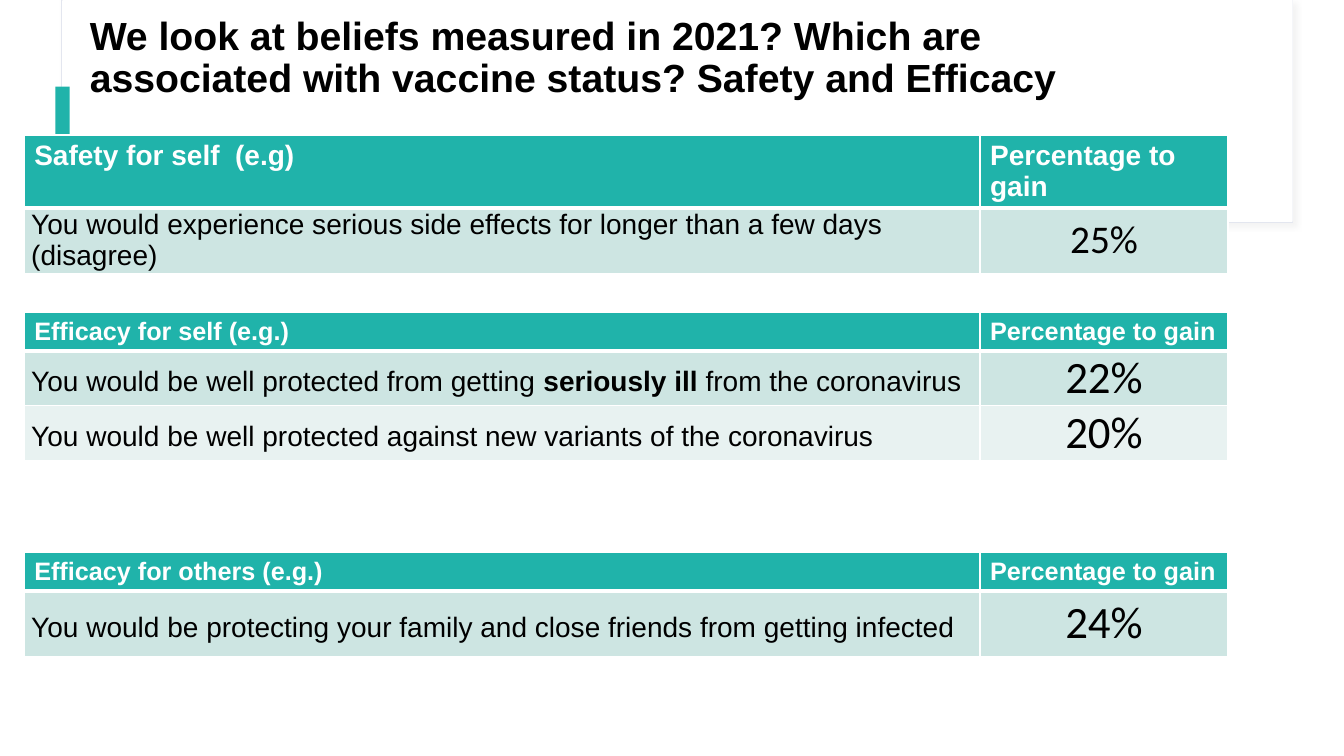
from dataclasses import dataclass
from typing import Optional

from lxml import etree
from pptx import Presentation
from pptx.dml.color import RGBColor
from pptx.enum import shapes, text
from pptx.oxml import ns
from pptx.util import Inches, Pt

TEAL = RGBColor(0x20, 0xB3, 0xAA)
BAND_DARK = RGBColor(0xCD, 0xE5, 0xE2)
BAND_LIGHT = RGBColor(0xE8, 0xF2, 0xF1)
FRAME_LINE = RGBColor(0xE3, 0xE6, 0xEF)
WHITE = RGBColor(0xFF, 0xFF, 0xFF)
BLACK = RGBColor(0, 0, 0)

TABLE_LEFT = 0.24
COLUMN_WIDTHS = (9.48, 2.46)
BODY_SIZE = 20


@dataclass
class Panel:
    left: float
    top: float
    width: float
    height: float
    fill: RGBColor
    line: Optional[RGBColor] = None
    shadow: bool = False


@dataclass
class Run:
    text: str
    bold: Optional[bool] = None
    size: Optional[float] = None


@dataclass
class Belief:
    runs: list[Run]
    percentage: str


@dataclass
class BeliefTable:
    top: float
    heading: str
    heading_size: float
    percentage_size: float
    header_height: float
    row_height: float
    beliefs: list[Belief]


TALL_SPACE = Run(" ", size=28)

PANELS = [
    Panel(0.61, 0, 12.21, 2.21, WHITE, FRAME_LINE, True),
    Panel(0.62, 0, 12.2, 2.2, WHITE),
    Panel(0.55, 0.86, 0.14, 0.77, TEAL),
]

TABLES = [
    BeliefTable(1.34, "Safety for self  (e.g)", 20, 28, 0.7, 0.65, [
        Belief([Run("You would experience serious side effects for longer "
                    "than a few days  (disagree)")], "25%"),
    ]),
    BeliefTable(5.48, "Efficacy for others (e.g.)", 18, 32, 0.3, 0.65, [
        Belief([Run("You would be protecting your family and close friends "
                    "from getting infected"), TALL_SPACE], "24%"),
    ]),
    BeliefTable(3.1, "Efficacy for self (e.g.)", 18, 32, 0.3, 0.3, [
        Belief([Run("You would be well protected from getting "),
                Run("seriously ill", bold=True),
                Run(" from the coronavirus"), TALL_SPACE], "22%"),
        Belief([Run("You would be well protected against new variants "
                    "of the coronavirus"), TALL_SPACE], "20%"),
    ]),
]


def add_shadow(shape) -> None:
    effects = shape.element.spPr.find(ns.qn("a:effectLst"))
    shadow = etree.SubElement(
        effects, ns.qn("a:outerShdw"), blurRad=str(Pt(4)), dist=str(Pt(3)),
        dir=str(45 * 60000), algn="tl", rotWithShape="0")
    color = etree.SubElement(shadow, ns.qn("a:srgbClr"), val="D9D9D9")
    etree.SubElement(color, ns.qn("a:alpha"), val="30000")


def add_panel(slide, panel: Panel) -> None:
    shape = slide.shapes.add_shape(
        shapes.MSO_SHAPE.RECTANGLE, Inches(panel.left), Inches(panel.top),
        Inches(panel.width), Inches(panel.height))
    shape.shadow.inherit = False
    shape.fill.solid()
    shape.fill.fore_color.rgb = panel.fill
    if panel.line is None:
        shape.line.fill.background()
    else:
        shape.line.color.rgb = panel.line
        shape.line.width = Pt(0.75)
    if panel.shadow:
        add_shadow(shape)


def set_font(font, name: str, size: float, color: RGBColor, bold: bool) -> None:
    font.name = name
    font.size = Pt(size)
    font.color.rgb = color
    font.bold = bold


def set_borders(cell, top: float, bottom: float) -> None:
    properties = cell._tc.get_or_add_tcPr()
    for side, width in (("L", 1), ("R", 1), ("T", top), ("B", bottom)):
        line = etree.SubElement(properties, ns.qn(f"a:ln{side}"), w=str(Pt(width)))
        fill = etree.SubElement(line, ns.qn("a:solidFill"))
        etree.SubElement(fill, ns.qn("a:srgbClr"), val=str(WHITE))


def set_fill(cell, color: RGBColor) -> None:
    cell.fill.solid()
    cell.fill.fore_color.rgb = color


def fill_header_cell(cell, label: str, size: float) -> None:
    set_borders(cell, top=1, bottom=3)
    set_fill(cell, TEAL)
    paragraph = cell.text_frame.paragraphs[0]
    paragraph.add_run().text = label
    set_font(paragraph.font, "Arial", size, WHITE, True)


def fill_body_cell(cell, runs: list[Run], name: str, size: float, row: int):
    set_borders(cell, top=3 if row == 1 else 1, bottom=1)
    set_fill(cell, BAND_DARK if row % 2 else BAND_LIGHT)
    cell.vertical_anchor = text.MSO_ANCHOR.MIDDLE
    cell.margin_left = cell.margin_right = Inches(0.07)
    cell.margin_top = cell.margin_bottom = 0
    paragraph = cell.text_frame.paragraphs[0]
    set_font(paragraph.font, name, size, BLACK, False)
    for part in runs:
        run = paragraph.add_run()
        run.text = part.text
        if part.bold is not None:
            run.font.bold = part.bold
        if part.size is not None:
            run.font.size = Pt(part.size)
    return paragraph


def add_belief_table(slide, data: BeliefTable) -> None:
    heights = [data.header_height] + [data.row_height] * len(data.beliefs)
    table = slide.shapes.add_table(
        len(heights), len(COLUMN_WIDTHS), Inches(TABLE_LEFT), Inches(data.top),
        Inches(sum(COLUMN_WIDTHS)), Inches(sum(heights))).table
    table.first_row = table.horz_banding = False
    for column, width in zip(table.columns, COLUMN_WIDTHS):
        column.width = Inches(width)
    for row, height in zip(table.rows, heights):
        row.height = Inches(height)
    for column, label in enumerate((data.heading, "Percentage to gain")):
        fill_header_cell(table.cell(0, column), label, data.heading_size)
    for row, belief in enumerate(data.beliefs, start=1):
        fill_body_cell(table.cell(row, 0), belief.runs, "Arial", BODY_SIZE, row)
        paragraph = fill_body_cell(table.cell(row, 1), [Run(belief.percentage)],
                                   "Calibri", data.percentage_size, row)
        paragraph.alignment = text.PP_ALIGN.CENTER


def set_title(slide, wording: str) -> None:
    title = slide.shapes.title
    title.left, title.top = Inches(0.79), Inches(0.17)
    title.width, title.height = Inches(11.12), Inches(0.83)
    frame = title.text_frame
    frame.text = wording
    frame.word_wrap = True
    frame.auto_size = text.MSO_AUTO_SIZE.NONE
    frame.vertical_anchor = text.MSO_ANCHOR.MIDDLE
    paragraph = frame.paragraphs[0]
    paragraph.alignment = text.PP_ALIGN.LEFT
    paragraph.line_spacing = 0.9
    set_font(paragraph.font, "Arial", 28, BLACK, True)
    # Bring the title in front of the panels
    title.element.getparent().append(title.element)


def main() -> None:
    presentation = Presentation()
    presentation.slide_width = Inches(13.33)
    presentation.slide_height = Inches(7.5)
    slide = presentation.slides.add_slide(presentation.slide_layouts[5])

    # Backdrop and title
    for panel in PANELS:
        add_panel(slide, panel)
    set_title(slide, "We look at beliefs measured in 2021? Which are associated "
                     "with vaccine status? Safety and Efficacy")

    # Belief tables
    for data in TABLES:
        add_belief_table(slide, data)
    presentation.save("out.pptx")


if __name__ == "__main__":
    main()
